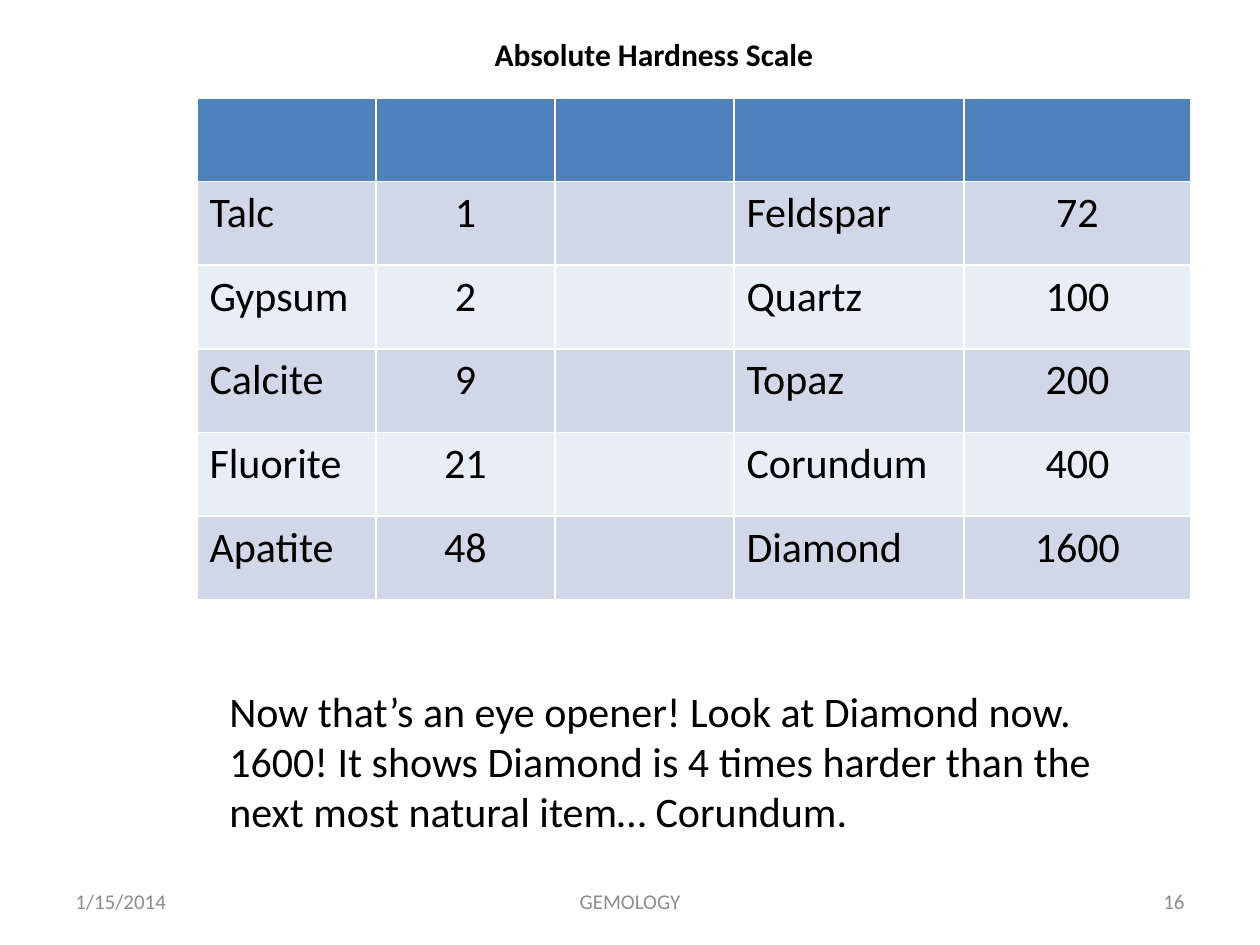
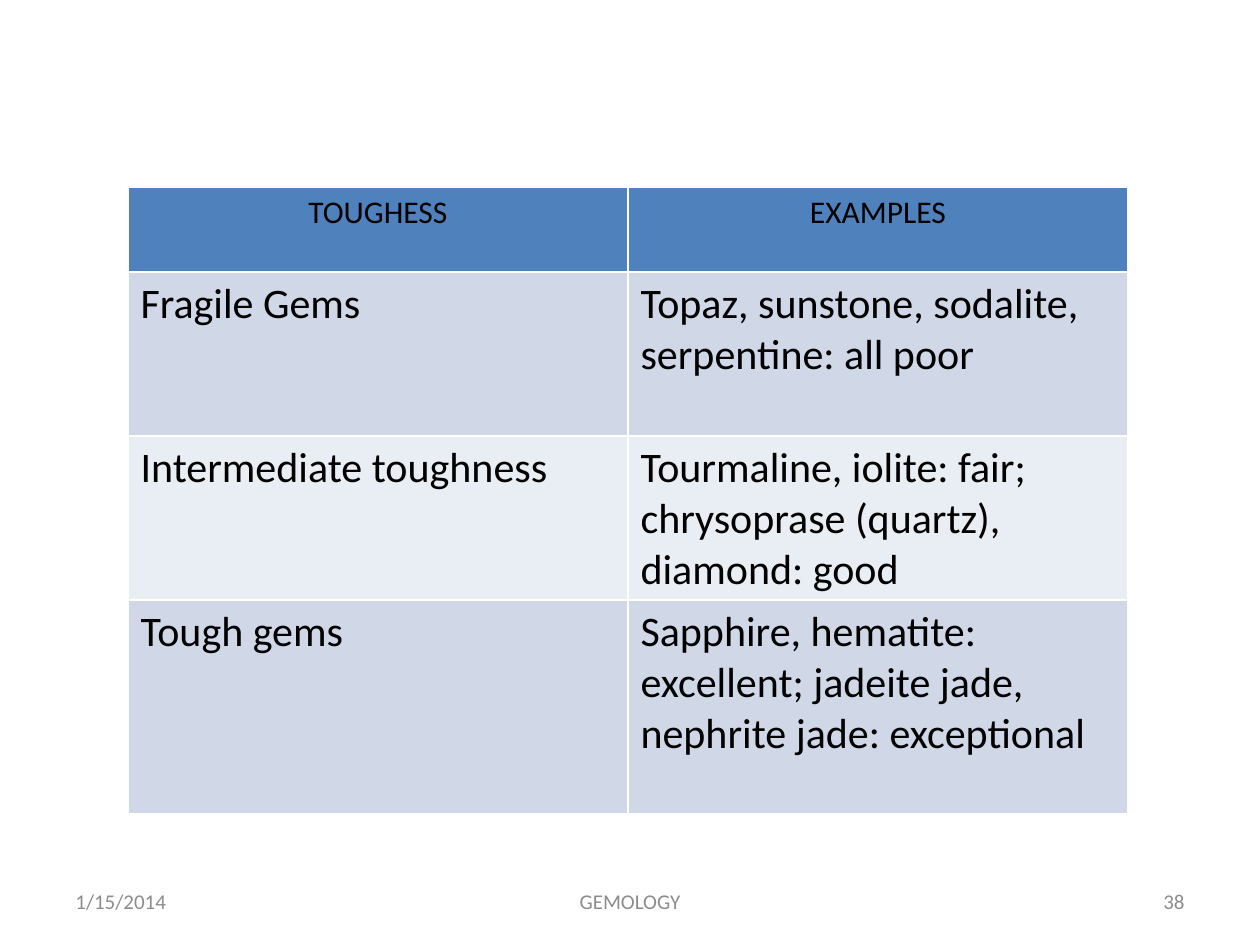
import pptx
import pptx.util
import pptx.dml.color
import pptx.enum.text

SCALE = 914400 / 126
FONT = "Calibri"
HEX = {"head": "4F81BD", "dark": "D0D8E8", "light": "E9EDF4",
       "text": "000000", "foot": "8C8C8C"}
ALIGN = pptx.enum.text.PP_ALIGN
ANCHOR = pptx.enum.text.MSO_ANCHOR
LEFT, MID, RIGHT = ALIGN.LEFT, ALIGN.CENTER, ALIGN.RIGHT

SCALE_ROWS = [
    ["", "", "", "", ""],
    ["Talc", "1", "", "Feldspar", "72"],
    ["Gypsum", "2", "", "Quartz", "100"],
    ["Calcite", "9", "", "Topaz", "200"],
    ["Fluorite", "21", "", "Corundum", "400"],
    ["Apatite", "48", "", "Diamond", "1600"],
]
TOUGH_ROWS = [
    ["TOUGHESS", "EXAMPLES"],
    ["Fragile Gems", "Topaz, sunstone, sodalite, serpentine: all poor"],
    ["Intermediate toughness",
     "Tourmaline, iolite: fair; chrysoprase (quartz), diamond: good"],
    ["Tough gems",
     "Sapphire, hematite: excellent; jadeite jade, nephrite jade: exceptional"],
]


def px(num):
    """Turn pixels into EMU."""
    return pptx.util.Emu(round(num * SCALE))


def color(name):
    """Look up a named colour."""
    return pptx.dml.color.RGBColor.from_string(HEX[name])


def write(frame, text, size, align=LEFT, tint="text", bold=False):
    """Put one styled paragraph into a text frame."""
    frame.text = text
    para = frame.paragraphs[0]
    para.alignment = align
    for run in para.runs:
        run.font.name = FONT
        run.font.size = pptx.util.Pt(size)
        run.font.bold = bold
        run.font.color.rgb = color(tint)


def label(slide, box, text, size, align=LEFT, tint="text", anchor=ANCHOR.TOP):
    """Add a wrapped text box."""
    frame = slide.shapes.add_textbox(*map(px, box)).text_frame
    frame.word_wrap = True
    frame.vertical_anchor = anchor
    write(frame, text, size, align, tint)


def title(slide, box, text):
    """Move and fill the title placeholder."""
    shape = slide.shapes.title
    shape.left, shape.top, shape.width, shape.height = map(px, box)
    frame = shape.text_frame
    frame.auto_size = pptx.enum.text.MSO_AUTO_SIZE.NONE
    frame.word_wrap = False
    frame.vertical_anchor = ANCHOR.TOP
    write(frame, text, 18, bold=True)


def footer(slide, box, number):
    """Place date, subject and slide number along the footer band."""
    left, top, width, height = box
    side, mid = 294, 400
    parts = [
        (left, side, "1/15/2014", LEFT),
        (left + (width - mid) // 2, mid, "GEMOLOGY", MID),
        (left + width - side, side, str(number), RIGHT),
    ]
    for start, span, text, align in parts:
        label(slide, (start, top, span, height), text, 12, align, "foot",
              ANCHOR.MIDDLE)


def grid(slide, spot, cols, rows, data):
    """Add a banded table with a header row and centred numbers."""
    box = (*spot, sum(cols), sum(rows))
    table = slide.shapes.add_table(len(rows), len(cols), *map(px, box)).table
    for col, width in zip(table.columns, cols):
        col.width = px(width)
    for i, (row, height) in enumerate(zip(table.rows, rows)):
        row.height = px(height)
        band = "head" if i == 0 else "dark" if i % 2 else "light"
        for cell, text in zip(row.cells, data[i]):
            cell.fill.solid()
            cell.fill.fore_color.rgb = color(band)
            if text:
                align = MID if i == 0 or text.isdigit() else LEFT
                write(cell.text_frame, text, 24 if i else 18, align)


def start(deck, layout, number):
    """Add a slide with the shared footer."""
    slide = deck.slides.add_slide(deck.slide_layouts.get_by_name(layout))
    footer(slide, (63, 876, 1134, 50), number)
    return slide


def hardness(deck):
    """Build the hardness scale slide."""
    slide = start(deck, "Title Only", 16)
    grid(slide, (197, 98), [179, 179, 179, 230, 227],
         [83.6] * len(SCALE_ROWS), SCALE_ROWS)
    label(slide, (217, 679, 896, 165),
          "Now that’s an eye opener! Look at Diamond now. 1600! It shows "
          "Diamond is 4 times harder than the next most natural item… "
          "Corundum.", 24)
    title(slide, (482, 29, 347, 50), "Absolute Hardness Scale")


def toughness(deck):
    """Build the toughness slide."""
    slide = start(deck, "Blank", 38)
    grid(slide, (128, 187), [500, 500], [85, 164, 164, 214], TOUGH_ROWS)


def main():
    """Build and save the deck."""
    deck = pptx.Presentation()
    deck.slide_width, deck.slide_height = px(1260), px(945)
    hardness(deck)
    toughness(deck)
    deck.save("out.pptx")


if __name__ == "__main__":
    main()
